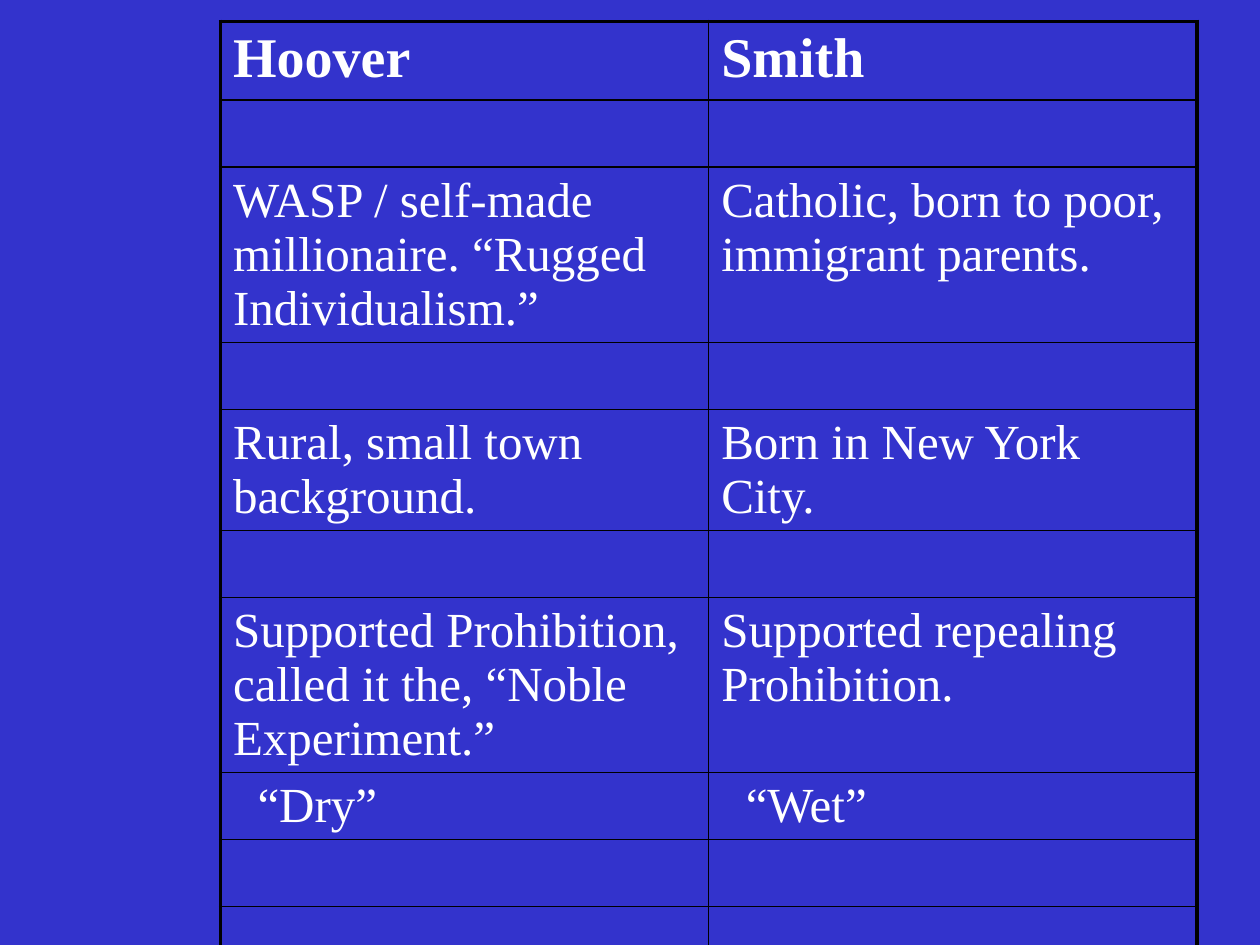
import dataclasses

import pptx
import pptx.dml.color
import pptx.oxml
import pptx.oxml.ns
import pptx.table
import pptx.util

Pt = pptx.util.Pt
RGBColor = pptx.dml.color.RGBColor

BACKGROUND = RGBColor(0x33, 0x33, 0xCC)
TEXT = RGBColor(0xFF, 0xFF, 0xFF)
BORDER = RGBColor(0x00, 0x00, 0x00)
FONT = "Times New Roman"
LEFT, TOP = 126, 12.24
COLUMN_WIDTH = 279
CELL_MARGIN = 7.2
INNER_LINE, OUTER_LINE = 1, 2.25


@dataclasses.dataclass(frozen=True)
class ComparisonRow:
    hoover: str = ""
    smith: str = ""
    height: float = 38.25
    size: float = 28
    bold: bool = False
    indent: float = 0


SPACER = ComparisonRow()
ROWS = [
    ComparisonRow("Hoover", "Smith", height=45, size=32, bold=True),
    SPACER,
    ComparisonRow(
        "WASP / self-made millionaire. “Rugged Individualism.”",
        "Catholic, born to poor, immigrant parents.",
        height=100,
    ),
    SPACER,
    ComparisonRow("Rural, small town background.", "Born in New York City.", height=69),
    SPACER,
    ComparisonRow(
        "Supported Prohibition, called it the, “Noble Experiment.”",
        "Supported repealing Prohibition.",
        height=100,
    ),
    ComparisonRow("“Dry”", "“Wet”", indent=14),
    SPACER,
    SPACER,
    SPACER,
    SPACER,
]


def add_border(cell: pptx.table._Cell, side: str, width: float) -> None:
    line = pptx.oxml.parse_xml(
        f'<a:ln{side} {pptx.oxml.ns.nsdecls("a")} w="{Pt(width)}">'
        f'<a:solidFill><a:srgbClr val="{BORDER}"/></a:solidFill></a:ln{side}>'
    )
    cell._tc.get_or_add_tcPr().append(line)


def format_cell(cell: pptx.table._Cell, text: str, row: ComparisonRow) -> None:
    cell.margin_left = Pt(CELL_MARGIN + row.indent)
    cell.fill.background()
    if not text:
        return
    cell.text_frame.text = text
    font = cell.text_frame.paragraphs[0].runs[0].font
    font.name = FONT
    font.size = Pt(row.size)
    font.bold = row.bold
    font.color.rgb = TEXT


def add_comparison(slide: pptx.slide.Slide, rows: list[ComparisonRow]) -> None:
    height = sum(row.height for row in rows)
    frame = slide.shapes.add_table(
        len(rows), 2, Pt(LEFT), Pt(TOP), Pt(2 * COLUMN_WIDTH), Pt(height)
    )
    table = frame.table
    table.first_row = False
    table.horz_banding = False
    for column in table.columns:
        column.width = Pt(COLUMN_WIDTH)
    last_row = len(rows) - 1
    for row_index, row in enumerate(rows):
        table.rows[row_index].height = Pt(row.height)
        for column_index, text in enumerate((row.hoover, row.smith)):
            cell = table.cell(row_index, column_index)
            outer_sides = {
                "L": column_index == 0,
                "R": column_index == 1,
                "T": row_index == 0,
                "B": row_index == last_row,
            }
            for side, is_outer in outer_sides.items():
                add_border(cell, side, OUTER_LINE if is_outer else INNER_LINE)
            format_cell(cell, text, row)


def main() -> None:
    presentation = pptx.Presentation()
    presentation.slide_width = Pt(720)
    presentation.slide_height = Pt(540)
    slide = presentation.slides.add_slide(presentation.slide_layouts[6])
    slide.background.fill.solid()
    slide.background.fill.fore_color.rgb = BACKGROUND
    add_comparison(slide, ROWS)
    presentation.save("out.pptx")


if __name__ == "__main__":
    main()
